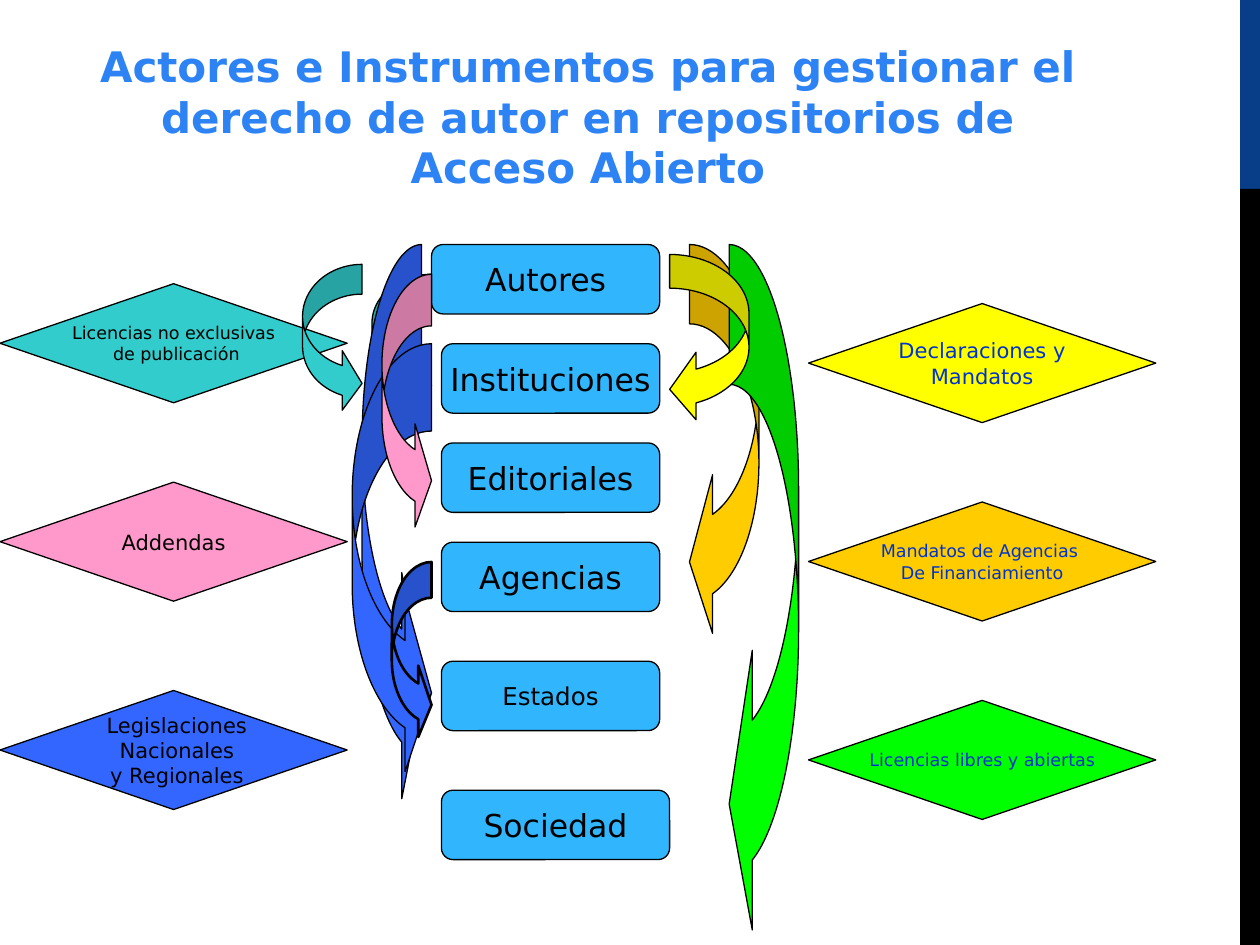
from pptx import Presentation
from pptx.dml.color import RGBColor
from pptx.enum import shapes, text
from pptx.util import Cm, Pt

KIND = shapes.MSO_SHAPE
HUES = {
    "title": "2D83F4", "navy": "073E87", "black": "000000", "sky": "31B6FD",
    "teal": "33CCCC", "pink": "FF99CC", "blue": "3366FF", "yellow": "FFFF00",
    "gold": "FFCC00", "green": "00FF00", "ink": "0033CC",
}


def hue(name):
    """Return the named colour."""
    return RGBColor.from_string(HUES[name])


def write(shape, words, size=12, color="black", bold=False, wrap=False):
    """Put centred, formatted text into a shape."""
    frame = shape.text_frame
    frame.text = words
    frame.auto_size = text.MSO_AUTO_SIZE.NONE
    frame.word_wrap = wrap
    frame.vertical_anchor = text.MSO_ANCHOR.MIDDLE
    for par in frame.paragraphs:
        par.alignment = text.PP_ALIGN.CENTER
        for run in par.runs:
            font = run.font
            font.name, font.size, font.bold = "DejaVu Sans", Pt(size), bold
            font.color.rgb = hue(color)


def draw(slide, kind, box, fill, line=0.75):
    """Add a filled shape, outlined in black unless line is zero."""
    shape = slide.shapes.add_shape(kind, *map(Cm, box))
    shape.shadow.inherit = False
    shape.fill.solid()
    shape.fill.fore_color.rgb = hue(fill)
    if line:
        shape.line.color.rgb = hue("black")
        shape.line.width = Pt(line)
    else:
        shape.line.fill.background()
    return shape


def strip(slide, left, top, width, height):
    """Draw the two-tone strip, its upper fifth in navy."""
    cut = height / 5
    draw(slide, KIND.RECTANGLE, (left, top, width, cut), "navy", 0)
    draw(slide, KIND.RECTANGLE, (left, top + cut, width, height - cut), "black", 0)


def head(slide, *box):
    """Place and fill the title."""
    title = slide.shapes.title
    title.left, title.top, title.width, title.height = map(Cm, box)
    write(title, "Actores e Instrumentos para gestionar el derecho de autor "
          "en repositorios de Acceso Abierto", 24, "title", True, True)


def actors(slide, left, top):
    """Stack the actor boxes from the given corner."""
    rows = [
        ("Autores", 0, 0, 4.6, 18), ("Instituciones", 0.2, 2, 4.4, 18),
        ("Editoriales", 0.2, 4, 4.4, 18), ("Agencias", 0.2, 6, 4.4, 18),
        ("Estados", 0.2, 8.4, 4.4, 14), ("Sociedad", 0.2, 11, 4.6, 18),
    ]
    for words, dx, dy, width, size in rows:
        box = left + dx, top + dy, width, 1.4
        write(draw(slide, KIND.FLOWCHART_ALTERNATE_PROCESS, box, "sky"), words, size)


def tools(slide, left, top, color, rows):
    """Stack one column of instrument diamonds."""
    for words, dy, fill, size in rows:
        box = left, top + dy, 7, 2.4
        write(draw(slide, KIND.FLOWCHART_DECISION, box, fill), words, size, color)


def curves(slide, kind, left, top, rows):
    """Draw curved arrows whose bands are a fifth of their height."""
    for dx, dy, width, height, fill, line in rows:
        arrow = draw(slide, kind, (left + dx, top + dy, width, height), fill, line)
        band = 0.2 * height / width
        for i, value in enumerate((band, 2 * band, 0.333)):
            arrow.adjustments[i] = value


def main():
    """Build and save the slide."""
    deck = Presentation()
    deck.slide_width, deck.slide_height = Cm(25.4), Cm(19.05)
    slide = deck.slides.add_slide(deck.slide_layouts[5])
    strip(slide, 25, 0, 0.4, 19.05)
    head(slide, 1.27, 0.76, 21.16, 3.18)
    actors(slide, 8.7, 4.93)
    tools(slide, 0, 5.72, "black", [
        ("Licencias no exclusivas\n de publicación", 0, "teal", 10),
        ("Addendas", 4, "pink", 12),
        (" Legislaciones\n Nacionales\n y Regionales", 8.2, "blue", 12),
    ])
    tools(slide, 16.3, 6.12, "ink", [
        ("Declaraciones y\nMandatos", 0, "yellow", 12),
        ("Mandatos de Agencias \nDe Financiamiento", 4, "gold", 10),
        ("Licencias libres y abiertas", 8, "green", 10),
    ])
    curves(slide, KIND.CURVED_LEFT_ARROW, 13.5, 4.93, [
        (0.4, 0, 1.4, 8, "gold", 0.75),
        (1.2, 0, 1.4, 14.1, "green", 0.75),
        (0, 0.2, 1.6, 3.4, "yellow", 0.75),
    ])
    curves(slide, KIND.CURVED_RIGHT_ARROW, 6.1, 4.93, [
        (1.4, 0.6, 1.2, 2.8, "teal", 0.75),
        (1.2, 0, 1.2, 11.4, "blue", 0.75),
        (1, 2, 1.6, 8.8, "blue", 0.75),
        (1.8, 6.4, 0.8, 3.6, "blue", 1.5),
        (1.6, 0.6, 1, 5.2, "pink", 0.75),
        (0, 0.4, 1.2, 3, "teal", 0.75),
    ])
    deck.save("out.pptx")


if __name__ == "__main__":
    main()
